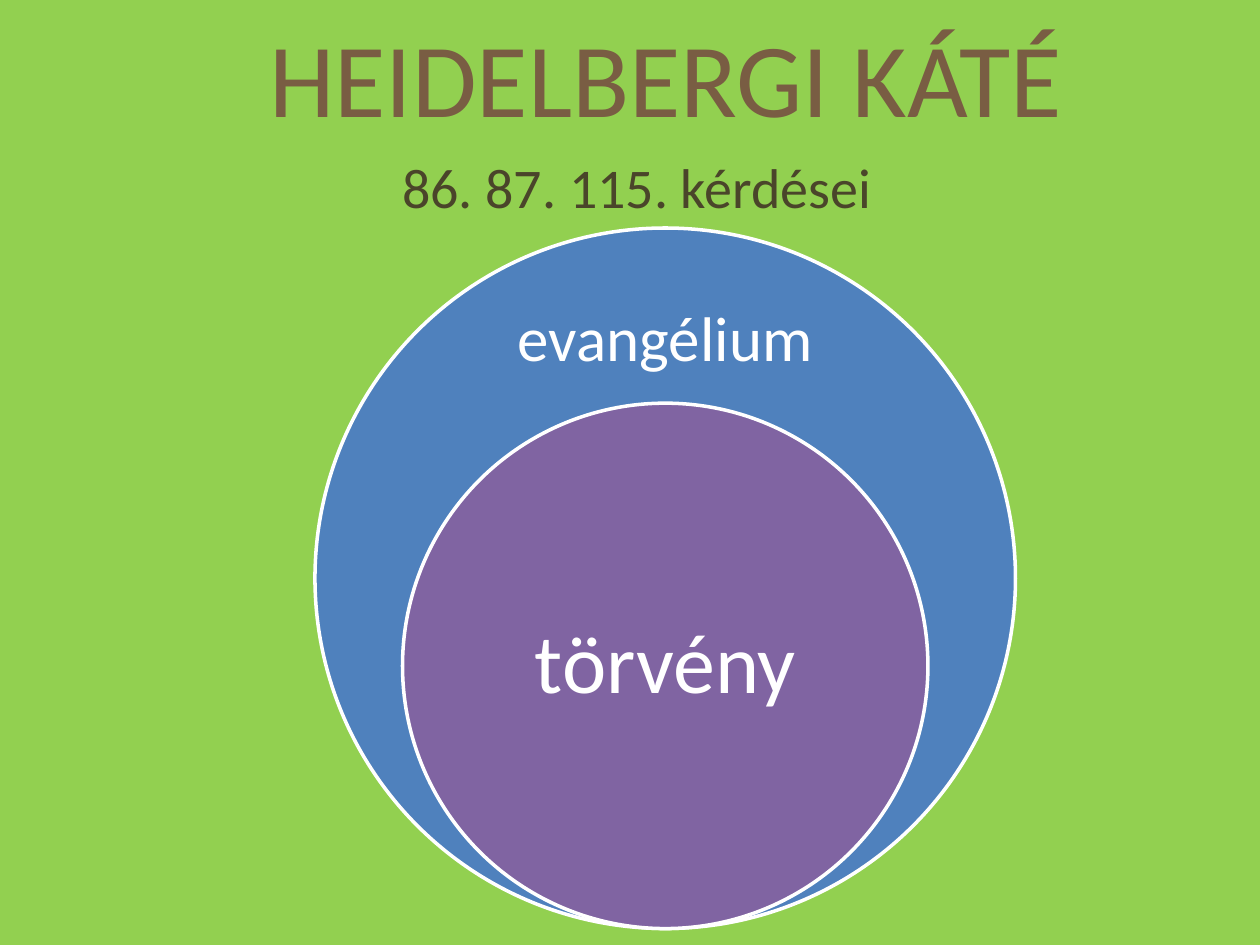
"""Build the Heidelberg Catechism slide with its two nested circles."""
from dataclasses import dataclass

from pptx import Presentation
from pptx import util as u
from pptx.dml.color import RGBColor
from pptx.enum import shapes, text

WIDTH, HEIGHT = 10, 7.5
CENTRE_X, CIRCLE_BASE, OUTER_DIAMETER = 5.28, 7.37, 5.56


@dataclass(frozen=True)
class Circle:
    """A circle on the common base, with its label's place and format."""

    label: str
    share: float
    fill: str
    label_top: float
    label_width: float
    label_height: float
    inset: float
    size: int


CIRCLES = (
    Circle("evangélium", 1, "4F81BD", 2.23, 2.92, 0.95, 0.28, 36),
    Circle("törvény", 0.75, "8064A2", 4.24, 2.95, 2.09, 0.37, 48),
)


def paint(target, colour: str) -> None:
    """Give a fill one solid colour."""
    target.solid()
    target.fore_color.rgb = RGBColor.from_string(colour)


def place(shape, left: float, top: float, width: float, height: float) -> None:
    """Move and size a shape in inches."""
    shape.left, shape.top = u.Inches(left), u.Inches(top)
    shape.width, shape.height = u.Inches(width), u.Inches(height)


def write(shape, wording: str, *, size: int, colour: str,
          anchor=text.MSO_ANCHOR.TOP, fit=text.MSO_AUTO_SIZE.NONE,
          inset: float | None = None, spacing: float = 1.0) -> None:
    """Write one centred, formatted paragraph into a shape."""
    frame = shape.text_frame
    frame.word_wrap = True
    frame.auto_size = fit
    frame.vertical_anchor = anchor
    if inset is not None:
        frame.margin_left = frame.margin_right = u.Inches(inset)
        frame.margin_top = frame.margin_bottom = u.Inches(inset)
    paragraph = frame.paragraphs[0]
    paragraph.alignment = text.PP_ALIGN.CENTER
    paragraph.line_spacing = spacing
    paragraph.space_before = u.Pt(0)
    run = paragraph.add_run()
    run.text = wording
    run.font.name = "Calibri"
    run.font.size = u.Pt(size)
    run.font.color.rgb = RGBColor.from_string(colour)


def draw_circle(slide, circle: Circle) -> None:
    """Draw a circle standing on the common base, and its label."""
    diameter = OUTER_DIAMETER * circle.share
    disc = slide.shapes.add_shape(shapes.MSO_SHAPE.OVAL, 0, 0, 0, 0)
    place(disc, CENTRE_X - diameter / 2, CIRCLE_BASE - diameter, diameter, diameter)
    disc.shadow.inherit = False
    paint(disc.fill, circle.fill)
    paint(disc.line.fill, "FFFFFF")
    disc.line.width = u.Pt(2)

    label = slide.shapes.add_textbox(0, 0, 0, 0)
    place(label, CENTRE_X - circle.label_width / 2, circle.label_top,
          circle.label_width, circle.label_height)
    write(label, circle.label, size=circle.size, colour="FFFFFF",
          anchor=text.MSO_ANCHOR.MIDDLE, inset=circle.inset, spacing=0.9)


def main() -> None:
    """Assemble and save the slide."""
    deck = Presentation()
    deck.slide_width, deck.slide_height = u.Inches(WIDTH), u.Inches(HEIGHT)
    slide = deck.slides.add_slide(deck.slide_layouts[0])
    paint(slide.background.fill, "92D050")

    heading, questions = slide.placeholders
    grow = text.MSO_AUTO_SIZE.SHAPE_TO_FIT_TEXT
    place(heading, 1.69, 0.05, 7.19, 1.11)
    write(heading, "HEIDELBERGI KÁTÉ", size=60, colour="795D43", fit=grow)
    place(questions, 1.67, 1.16, 6.77, 0.64)
    write(questions, "86. 87. 115. kérdései", size=32, colour="4A452A", fit=grow)

    for circle in CIRCLES:
        draw_circle(slide, circle)
    deck.save("out.pptx")


if __name__ == "__main__":
    main()
